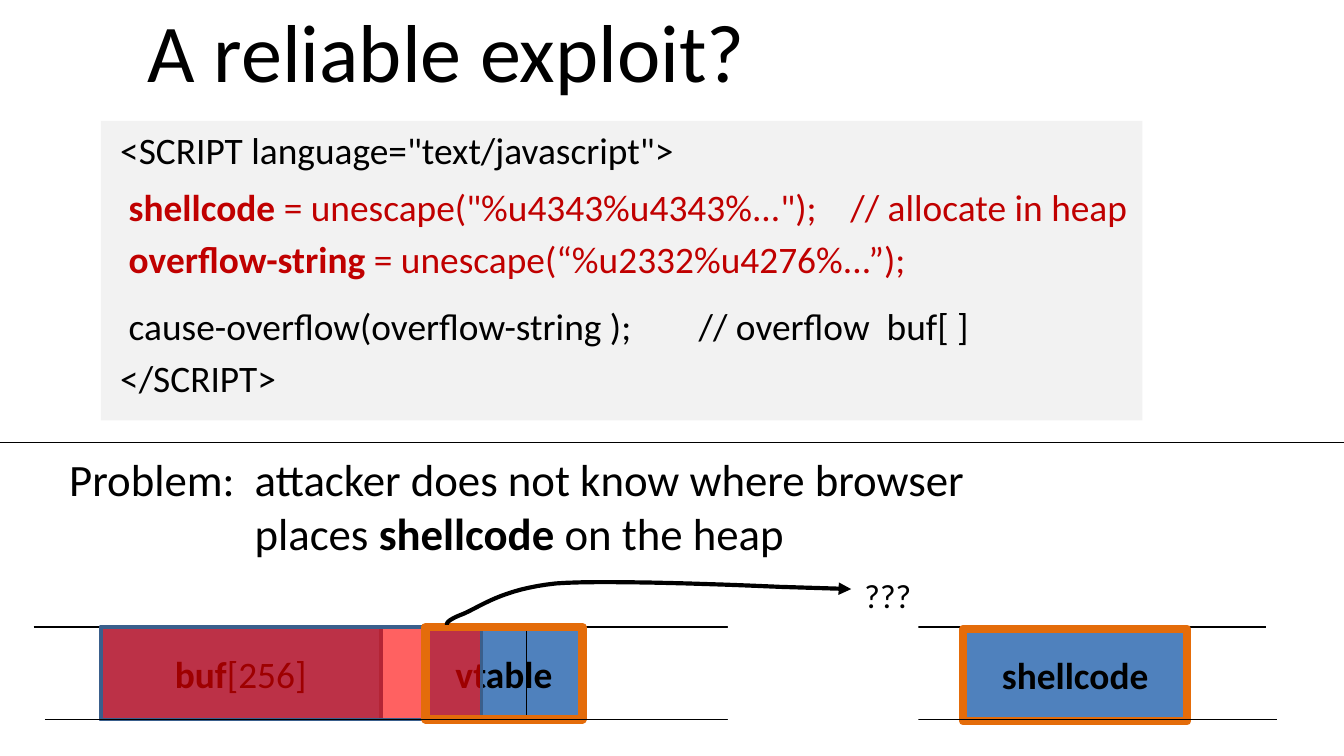
"""Builds a slide on why a heap overflow exploit is unreliable."""
from lxml import etree
from pptx import Presentation, util as u
from pptx.dml import color
from pptx.enum import shapes, text
from pptx.oxml import ns

COLORS = {"ink": "000000", "paper": "FFFFFF", "panel": "F2F2F2", "code": "C00000",
          "block": "4F81BD", "edge": "3A5F8C", "overflow": "FF0000", "frame": "E46C0A"}


def rgb(name):
    return color.RGBColor.from_string(COLORS[name])


def add_span(para, words, size=20, ink="ink", bold=False):
    span = para.add_run()
    span.text = words
    span.font.name = "Calibri"
    span.font.size = u.Pt(size)
    span.font.bold = bold
    span.font.color.rgb = rgb(ink)


def bezier(start, first, second, end, steps=16):
    for step in range(1, steps + 1):
        t = step / steps
        weights = ((1 - t) ** 3, 3 * t * (1 - t) ** 2, 3 * t * t * (1 - t), t ** 3)
        yield tuple(sum(w * point[axis] for w, point in zip(weights, (start, first, second, end)))
                    for axis in (0, 1))


class Sketch:
    """Draws on one page, measured in a grid of 120 columns by 67.5 rows."""

    cell = u.Inches(1) / 12

    def __init__(self, deck):
        deck.slide_width, deck.slide_height = self.grid(120, 67.5)
        self.page = deck.slides.add_slide(deck.slide_layouts[6])

    def grid(self, *cells):
        return [u.Emu(round(value * self.cell)) for value in cells]

    def rect(self, *area, fill=None, line=None, width=2, alpha=None):
        box = self.page.shapes.add_shape(shapes.MSO_SHAPE.RECTANGLE, *self.grid(*area))
        box.shadow.inherit = False
        if fill:
            box.fill.solid()
            box.fill.fore_color.rgb = rgb(fill)
        else:
            box.fill.background()
        if alpha:
            tint = box._element.spPr.find(ns.qn("a:solidFill")).find(ns.qn("a:srgbClr"))
            etree.SubElement(tint, ns.qn("a:alpha")).set("val", str(alpha * 1000))
        if line:
            box.line.color.rgb = rgb(line)
            box.line.width = u.Pt(width)
        else:
            box.line.fill.background()
        return box

    def block(self, *area, name, rest=""):
        box = self.rect(*area, fill="block", line="edge")
        para = box.text_frame.paragraphs[0]
        para.alignment = text.PP_ALIGN.CENTER
        add_span(para, name, bold=True)
        if rest:
            add_span(para, rest)

    def line(self, *ends):
        rule = self.page.shapes.add_connector(shapes.MSO_CONNECTOR.STRAIGHT, *self.grid(*ends))
        rule.line.color.rgb = rgb("ink")
        rule.line.width = u.Pt(0.75)
        etree.SubElement(rule._element.spPr, ns.qn("a:effectLst"))

    def arrow(self, points):
        start, *others = [self.grid(*point) for point in points]
        builder = self.page.shapes.build_freeform(*start)
        builder.add_line_segments(others, close=False)
        curve = builder.convert_to_shape()
        curve.shadow.inherit = False
        curve.fill.background()
        curve.line.color.rgb = rgb("ink")
        curve.line.width = u.Pt(2.25)
        etree.SubElement(curve.line._get_or_add_ln(), ns.qn("a:tailEnd")).set("type", "triangle")

    def frame(self, *area, wrap=True, middle=False):
        frame = self.page.shapes.add_textbox(*self.grid(*area)).text_frame
        frame.word_wrap = wrap
        if middle:
            frame.vertical_anchor = text.MSO_ANCHOR.MIDDLE
        return frame

    def label(self, *area, words, size, **options):
        add_span(self.frame(*area, **options).paragraphs[0], words, size)

    def body(self, *area, lines):
        frame = self.frame(*area)
        frame.margin_top = u.Inches(0.22)
        for number, (before, margin, hang, spans) in enumerate(lines):
            para = frame.add_paragraph() if number else frame.paragraphs[0]
            props = para._p.get_or_add_pPr()
            props.set("marL", str(u.Inches(margin)))
            props.set("indent", str(-u.Inches(hang)))
            para.space_before = u.Pt(before)
            for words, style in spans:
                if words == "\n":
                    para.add_line_break()
                else:
                    add_span(para, words, **style)


def main():
    deck = Presentation()
    sketch = Sketch(deck)
    plain, red, red_bold = {}, {"ink": "code"}, {"ink": "code", "bold": True}
    large, large_bold = {"size": 24}, {"size": 24, "bold": True}

    sketch.rect(9, 10.8, 93, 26.75, fill="panel")
    sketch.label(6, -1.2, 108, 11.3, words="\tA reliable exploit?", size=44, middle=True)
    sketch.body(5, 8.75, 108, 53.3, lines=[
        (0, 0.38, 0, [('<SCRIPT language="text/javascript">', plain)]),
        (6.5, 0.38, 0, [(" ", red), ("shellcode", red_bold),
                        (' = unescape("%u4343%u4343%...");    // allocate in heap', red)]),
        (3.6, 0.38, 0, [(" ", red), ("overflow-string", red_bold),
                        (" = unescape(“%u2332%u4276%...”);", red)]),
        (12.2, 0.38, 0, [(" cause-overflow(overflow-string );        // overflow  buf[ ]", plain)]),
        (3.6, 0.38, 0, [("</SCRIPT>", plain)]),
        (28, 1.38, 1.38, [("Problem:\tattacker does not know where browser ", large), ("\n", {}),
                          ("places ", large), ("shellcode", large_bold), (" on the heap", large)]),
    ])

    top, bottom, height = 56, 64.25, 8.25
    vtable, shellcode = (38, top, 14, height), (86, top + 0.15, 20, height)
    sketch.block(9, top, 25, height, name="buf", rest="[256]")
    sketch.block(*shellcode, name="shellcode")
    sketch.line(3, top, 113, top)
    sketch.block(*vtable, name="vtable")
    for column in (43, 47):
        sketch.line(column, top, column, bottom)
    sketch.rect(9, top, 34, height, fill="overflow", line="edge", alpha=62)
    for area in (shellcode, vtable):
        sketch.rect(*area, line="frame", width=4.5)
    sketch.line(4, bottom, 114, bottom)
    sketch.rect(65, 55.2, 17, 10.6, fill="paper")

    start, bend, flat = (39.9, 55.8), (41.4, 54.8), (49.6, 52.1)
    sketch.arrow([start, *bezier(start, (39.9, 55.7), (39.8, 55.4), bend),
                  *bezier(bend, (43, 54.1), (44.9, 52.6), flat),
                  *bezier(flat, (54.4, 51.7), (69.6, 52.4), (69.6, 52.4)), (76, 52.6)])
    sketch.label(76, 50.75, 6.6, 4.8, words="???", size=18, wrap=False)
    sketch.line(0, 39.5, 120, 39.5)
    deck.save("out.pptx")


if __name__ == "__main__":
    main()
